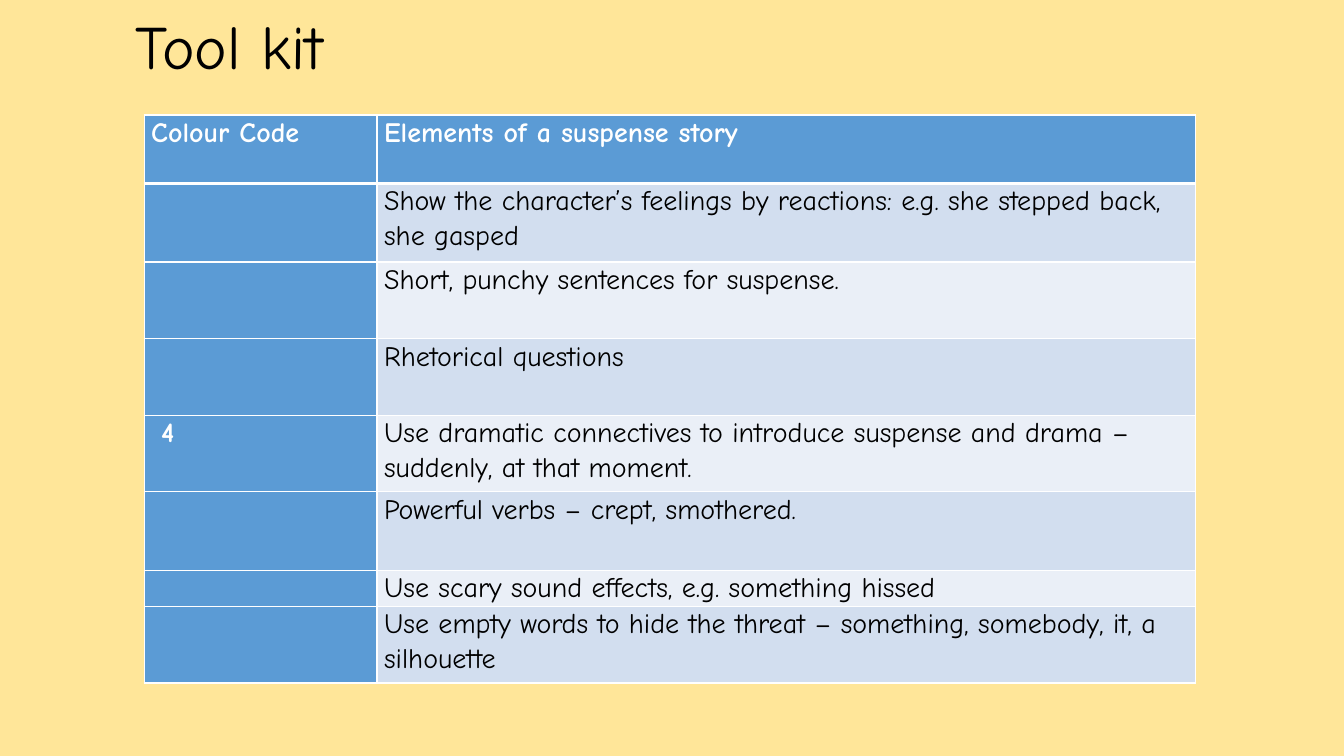
from lxml.etree import SubElement
from pptx import Presentation
from pptx.dml.color import RGBColor
from pptx.enum.text import MSO_ANCHOR
from pptx.oxml.ns import qn
from pptx.util import Inches, Pt

FONT = "Comic Neue"
COLORS = {
    "background": "FFE699",
    "header": "5B9BD5",
    "odd_row": "D2DEEF",
    "even_row": "EAEFF7",
    "white": "FFFFFF",
    "black": "000000",
}
COLUMN_WIDTHS = [2.31, 8.12]
ROWS = [
    # height, colour code, element
    (0.68, "Colour Code", "Elements of a suspense story"),
    (0.78, "", "Show the character’s feelings by reactions: e.g. she stepped back, she gasped"),
    (0.76, "", "Short, punchy sentences for suspense."),
    (0.76, "", "Rhetorical questions"),
    (0.76, " 4", "Use dramatic connectives to introduce suspense and drama – suddenly, at that moment."),
    (0.78, "", "Powerful verbs – crept, smothered."),
    (0.35, "", "Use scary sound effects, e.g. something hissed"),
    (0.76, "", "Use empty words to hide the threat – something, somebody, it, a silhouette"),
]


def rgb(name):
    return RGBColor.from_string(COLORS[name])


def format_text(text_frame, size, color, line_spacing, bold=False):
    for paragraph in text_frame.paragraphs:
        paragraph.line_spacing = line_spacing
        for run in paragraph.runs:
            run.font.name = FONT
            run.font.size = Pt(size)
            run.font.bold = bold
            run.font.color.rgb = rgb(color)


def add_title(slide, text):
    shape = slide.shapes.add_textbox(Inches(1.25), Inches(0), Inches(10.33), Inches(0.99))
    text_frame = shape.text_frame
    text_frame.word_wrap = True
    text_frame.vertical_anchor = MSO_ANCHOR.MIDDLE
    text_frame.text = text
    format_text(text_frame, 44, "black", 0.9)


def set_borders(cell, bottom_width):
    """Draw white lines on all four sides, before the fill in the cell's XML."""
    properties = cell._tc.get_or_add_tcPr()
    widths = {"a:lnL": 1, "a:lnR": 1, "a:lnT": 1, "a:lnB": bottom_width}
    for position, (side, width) in enumerate(widths.items()):
        line = SubElement(properties, qn(side), w=str(Pt(width)))
        fill = SubElement(line, qn("a:solidFill"))
        SubElement(fill, qn("a:srgbClr"), val=COLORS["white"])
        properties.insert(position, line)


def format_cell(cell, text, fill, color, bold, bottom_width):
    cell.margin_left = cell.margin_right = Inches(0.07)
    cell.margin_top = cell.margin_bottom = Inches(0)
    cell.fill.solid()
    cell.fill.fore_color.rgb = rgb(fill)
    set_borders(cell, bottom_width)
    cell.text_frame.text = text
    format_text(cell.text_frame, 20, color, 1.07, bold)


def add_toolkit_table(slide):
    height = sum(row[0] for row in ROWS)
    table = slide.shapes.add_table(
        len(ROWS), len(COLUMN_WIDTHS), Inches(1.43), Inches(1.14),
        Inches(sum(COLUMN_WIDTHS)), Inches(height)).table
    for column, width in zip(table.columns, COLUMN_WIDTHS):
        column.width = Inches(width)
    for row_index, (row_height, *texts) in enumerate(ROWS):
        table.rows[row_index].height = Inches(row_height)
        for column_index, text in enumerate(texts):
            is_heading = row_index == 0 or column_index == 0
            band = "odd_row" if row_index % 2 else "even_row"
            format_cell(
                table.cell(row_index, column_index), text,
                fill="header" if is_heading else band,
                color="white" if is_heading else "black",
                bold=is_heading,
                bottom_width=3 if row_index == 0 else 1)


def main():
    presentation = Presentation()
    presentation.slide_width = Inches(13.33)
    presentation.slide_height = Inches(7.5)
    slide = presentation.slides.add_slide(presentation.slide_layouts[6])
    slide.background.fill.solid()
    slide.background.fill.fore_color.rgb = rgb("background")
    add_title(slide, "Tool kit")
    add_toolkit_table(slide)
    presentation.save("out.pptx")


if __name__ == "__main__":
    main()
